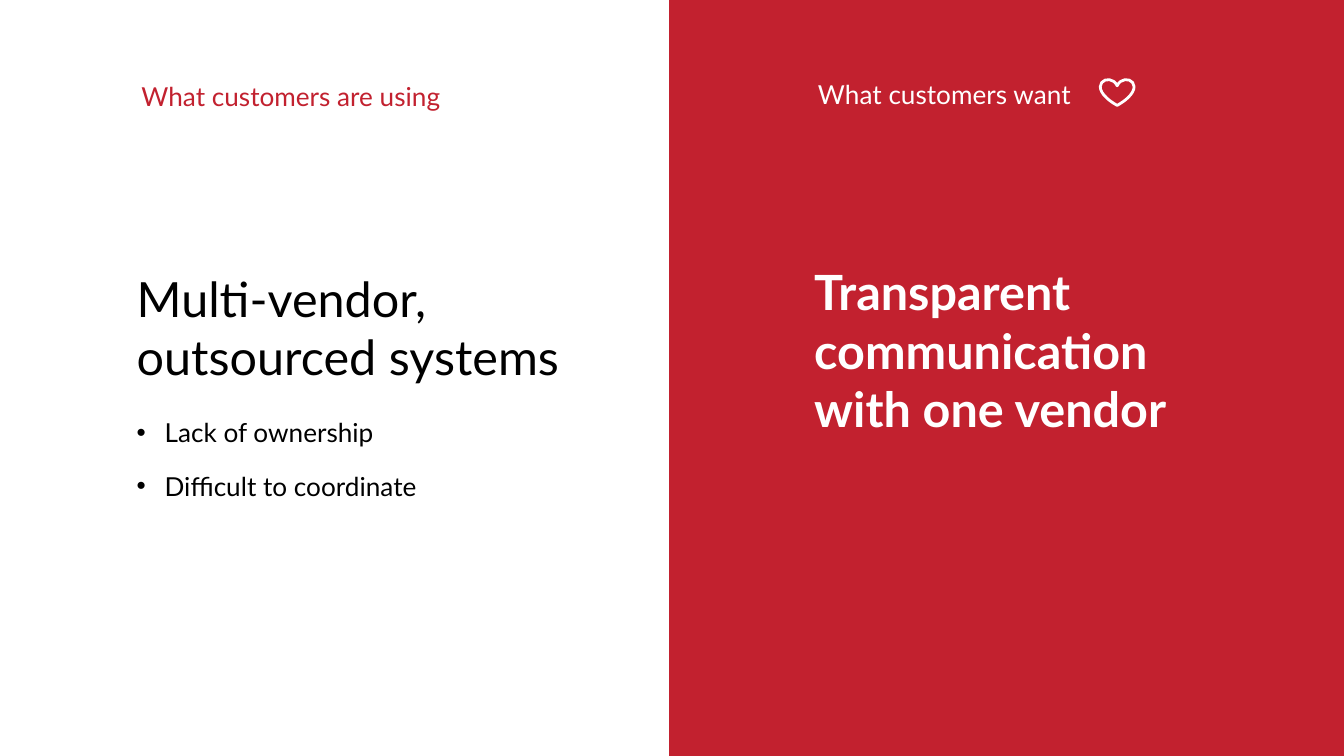
import lxml.etree
import pptx
import pptx.dml.color
import pptx.enum.shapes
import pptx.enum.text
import pptx.oxml.ns
import pptx.util

Pt = pptx.util.Pt
RED = pptx.dml.color.RGBColor(0xC2, 0x21, 0x2F)
WHITE = pptx.dml.color.RGBColor(0xFF, 0xFF, 0xFF)
BLACK = pptx.dml.color.RGBColor(0x00, 0x00, 0x00)

FONT = "Lato"
HEADING_SIZE = 14
STATEMENT_SIZE = 26
COMPARISON_LAYOUT = 4
BULLET_INDENT = 15


def place(shape, left, top, width, height):
    shape.left, shape.top = Pt(left), Pt(top)
    shape.width, shape.height = Pt(width), Pt(height)


def set_bullet(para, char):
    """Give the paragraph a hanging bullet, or none if char is empty."""
    properties = para._p.get_or_add_pPr()
    indent = Pt(BULLET_INDENT) if char else 0
    properties.set("marL", str(indent))
    properties.set("indent", str(-indent))
    tag = pptx.oxml.ns.qn("a:buChar" if char else "a:buNone")
    bullet = lxml.etree.SubElement(properties, tag)
    if char:
        bullet.set("char", char)


def write(shape, lines, size, color, bold=False, bullet="", spacing=1.0, before=0):
    frame = shape.text_frame
    frame.text = "\n".join(lines)
    frame.word_wrap = True
    frame.auto_size = pptx.enum.text.MSO_AUTO_SIZE.NONE
    frame.vertical_anchor = pptx.enum.text.MSO_ANCHOR.TOP
    for para in frame.paragraphs:
        set_bullet(para, bullet)
        para.alignment = pptx.enum.text.PP_ALIGN.LEFT
        para.line_spacing = spacing
        para.space_before = Pt(before)
        para.font.name = FONT
        para.font.size = Pt(size)
        para.font.bold = bold
        para.font.color.rgb = color


def build_current_side(page, left, top):
    statement, heading, problems = (page.placeholders[i] for i in (0, 1, 2))
    place(heading, left + 68.5, top + 39.5, 230, 25)
    write(heading, ["What customers are using"], HEADING_SIZE, RED)
    place(statement, left + 66, top + 140.5, 270, 73)
    write(statement, ["Multi-vendor, outsourced systems"], STATEMENT_SIZE, BLACK)
    place(problems, left + 66, top + 215.5, 192, 72)
    write(problems, ["Lack of ownership", "Difficult to coordinate"], HEADING_SIZE,
          BLACK, bullet="•", spacing=1.25, before=7.5)


def build_wanted_side(page, left, top, width, height):
    kinds = pptx.enum.shapes.MSO_SHAPE
    panel = page.shapes.add_shape(kinds.RECTANGLE, Pt(left), Pt(top), Pt(width), Pt(height))
    panel.shadow.inherit = False
    panel.fill.solid()
    panel.fill.fore_color.rgb = RED
    panel.line.fill.background()
    page.placeholders[0].element.addprevious(panel.element)

    heading, statement = page.placeholders[3], page.placeholders[4]
    place(heading, left + 72.5, top + 38.5, 216, 29)
    write(heading, ["What customers want"], HEADING_SIZE, WHITE)
    place(statement, left + 70.5, top + 137, 216, 101.5)
    write(statement, ["Transparent communication with one vendor"],
          STATEMENT_SIZE, WHITE, bold=True)

    heart = page.shapes.add_shape(kinds.HEART, Pt(left + 231), Pt(top + 42.5), Pt(18), Pt(14))
    heart.shadow.inherit = False
    heart.fill.background()
    heart.line.color.rgb = WHITE
    heart.line.width = Pt(1.5)


def main():
    deck = pptx.Presentation()
    deck.slide_width, deck.slide_height = Pt(720), Pt(405)
    page = deck.slides.add_slide(deck.slide_layouts[COMPARISON_LAYOUT])
    page.background.fill.solid()
    page.background.fill.fore_color.rgb = WHITE
    build_current_side(page, 0, 0)
    build_wanted_side(page, 358.5, 0, 361.5, 405)
    deck.save("out.pptx")


if __name__ == "__main__":
    main()
